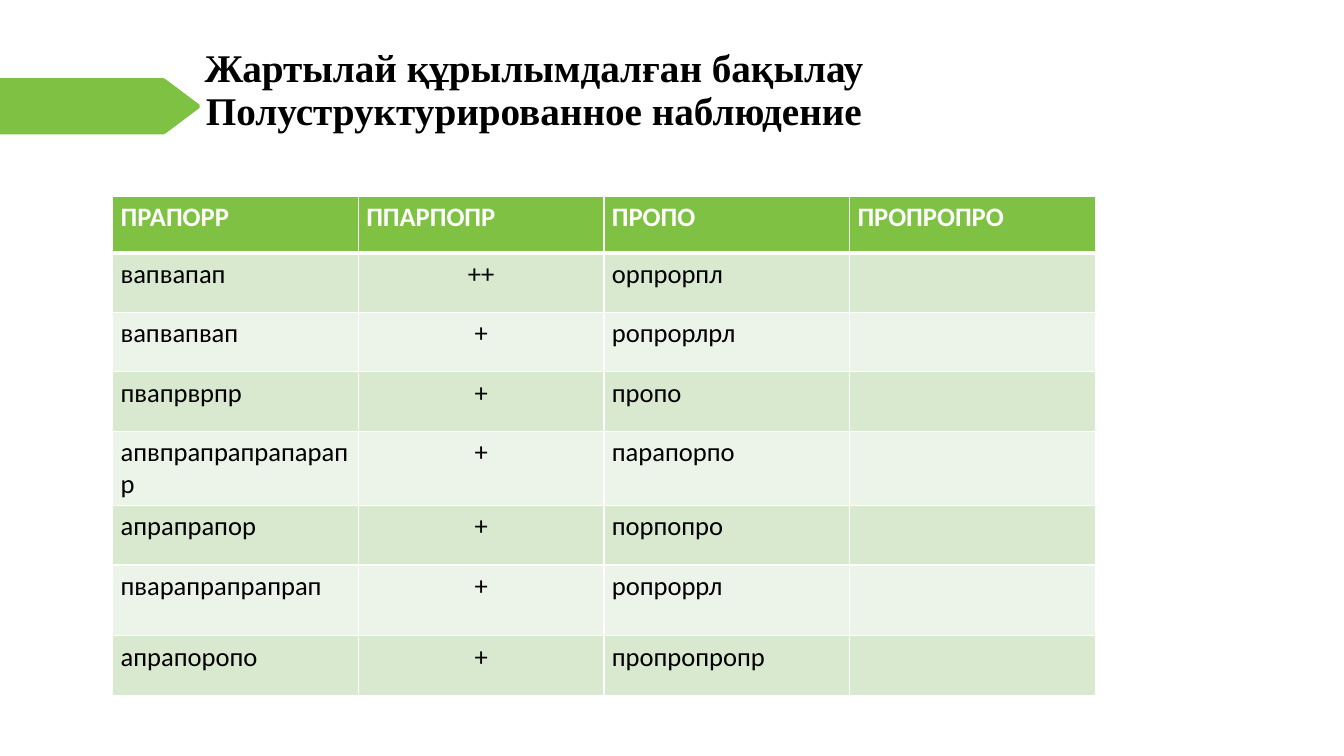
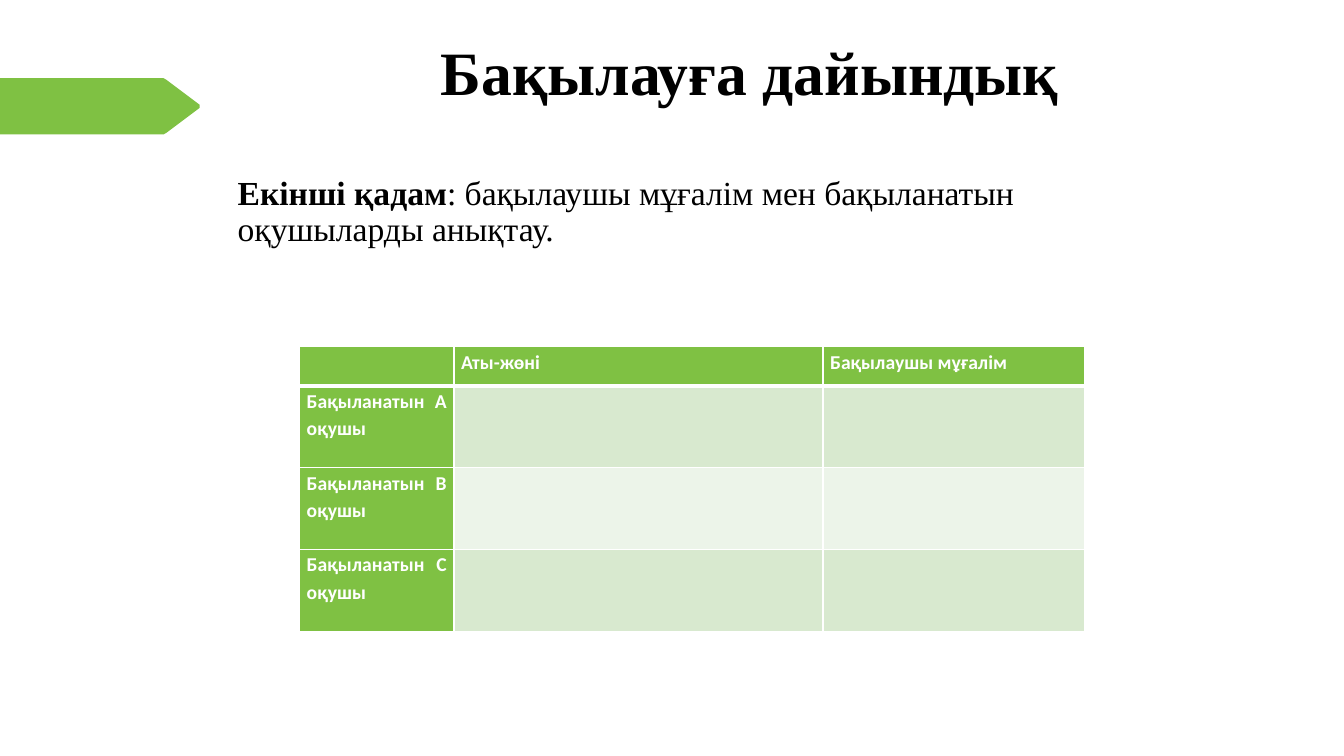
from dataclasses import dataclass

from lxml.etree import SubElement
from pptx import Presentation
from pptx.dml.color import RGBColor as RGB
from pptx.enum.text import MSO_ANCHOR as ANCHOR, PP_ALIGN as ALIGN
from pptx.oxml.ns import qn
from pptx.util import Cm, Pt


@dataclass(frozen=True)
class Theme:
    green: str = "7FC143"
    stripe_dark: str = "D8E9CF"
    stripe_light: str = "ECF4E9"
    white: str = "FFFFFF"
    black: str = "000000"
    serif: str = "Times New Roman"
    sans: str = "Calibri"
    title: int = 28
    title_large: int = 44
    body: int = 24
    cell: int = 19
    cell_small: int = 14
    rule: int = 1
    header_rule: int = 3
    tight: float = 0.9


T = Theme()


def write(p, text, font=T.serif, size=T.body, color=T.black, bold=False,
          align=ALIGN.LEFT, spacing=1.0):
    """Append text to a paragraph; a newline becomes a line break."""
    p.alignment = align
    p.line_spacing = spacing
    for i, line in enumerate(text.split("\n")):
        if i:
            p.add_line_break()
        r = p.add_run()
        r.text = line
        r.font.name = font
        r.font.size = Pt(size)
        r.font.bold = bold
        r.font.color.rgb = RGB.from_string(color)


def add_text_box(s, left, top, width, height, anchor=ANCHOR.TOP):
    """Add a wrapping text box and return its first paragraph."""
    tf = s.shapes.add_textbox(Cm(left), Cm(top), Cm(width), Cm(height)).text_frame
    tf.word_wrap = True
    tf.vertical_anchor = anchor
    return tf.paragraphs[0]


def add_title(s, text, box, size):
    p = add_text_box(s, *box, anchor=ANCHOR.MIDDLE)
    write(p, text, size=size, bold=True, align=ALIGN.CENTER, spacing=T.tight)


def add_arrow_band(s):
    """Draw the left arrow band, mirrored about its horizontal axis."""
    axis = 2.68
    upper = [(0, 0.71), (4.12, 0.71), (4.19, 0.67), (5.03, 0.04)]
    points = [(x, axis - dy) for x, dy in upper]
    points += [(x, axis + dy) for x, dy in reversed(upper)]
    points = [(Cm(x), Cm(y)) for x, y in points]
    builder = s.shapes.build_freeform(*points[0])
    builder.add_line_segments(points[1:], close=True)
    sp = builder.convert_to_shape()
    sp.shadow.inherit = False
    sp.fill.solid()
    sp.fill.fore_color.rgb = RGB.from_string(T.green)
    sp.line.fill.background()


def set_borders(cell, **widths):
    """Give the sides L, R, T and B of a cell white rules, widths in points."""
    tc_pr = cell._tc.get_or_add_tcPr()
    for side in "LRTB":
        width = Pt(widths.get(side, T.rule))
        ln = SubElement(tc_pr, qn(f"a:ln{side}"), w=str(width))
        fill = SubElement(ln, qn("a:solidFill"))
        SubElement(fill, qn("a:srgbClr"), val=T.white)


def add_table(s, left, top, widths, heights, rows, margins, size,
              aligns, spacing=1.0, header_column=False):
    """Add a striped table; aligns holds one alignment per column."""
    frame = s.shapes.add_table(len(heights), len(widths), Cm(left), Cm(top),
                               Cm(sum(widths)), Cm(sum(heights)))
    table = frame.table
    for column, width in zip(table.columns, widths):
        column.width = Cm(width)
    for row, height in zip(table.rows, heights):
        row.height = Cm(height)
    for i, texts in enumerate(rows):
        stripe = T.stripe_dark if i % 2 else T.stripe_light
        rules = {0: {"B": T.header_rule}, 1: {"T": T.header_rule}}.get(i, {})
        for j, text in enumerate(texts):
            cell = table.cell(i, j)
            header = i == 0 or (header_column and j == 0)
            cell.margin_left = cell.margin_right = Cm(margins[0])
            cell.margin_top = cell.margin_bottom = Cm(margins[1])
            set_borders(cell, **rules)
            cell.fill.solid()
            cell.fill.fore_color.rgb = RGB.from_string(T.green if header else stripe)
            if text:
                write(cell.text_frame.paragraphs[0], text, font=T.sans, size=size,
                      color=T.white if header else T.black, bold=header,
                      align=aligns[j] if i else aligns[0], spacing=spacing)


def add_slide(prs):
    s = prs.slides.add_slide(prs.slide_layouts[6])
    add_arrow_band(s)
    return s


def build_observation(prs):
    s = add_slide(prs)
    add_title(s, "Жартылай құрылымдалған бақылау\nПолуструктурированное наблюдение",
              (1.07, 0.51, 24.77, 3.58), T.title)
    rows = [
        ("ПРАПОРР", "ППАРПОПР", "ПРОПО", "ПРОПРОПРО"),
        ("вапвапап", "++", "орпрорпл", ""),
        ("вапвапвап", "+", "ропрорлрл", ""),
        ("пвапрврпр", "+", "пропо", ""),
        ("апвпрапрапрапарапр", "+", "парапорпо", ""),
        ("апрапрапор", "+", "порпопро", ""),
        ("пварапрапрапрап", "+", "ропроррл", ""),
        ("апрапоропо", "+", "пропропропр", ""),
    ]
    add_table(s, 2.84, 4.95, [6.19] * 4,
              [1.42, 1.5, 1.5, 1.5, 1.83, 1.5, 1.78, 1.5], rows,
              margins=(0.2, 0.13), size=T.cell,
              aligns=[ALIGN.LEFT, ALIGN.CENTER, ALIGN.LEFT, ALIGN.LEFT])


def build_preparation(prs):
    s = add_slide(prs)
    add_title(s, "Бақылауға дайындық", (8.74, 0.91, 20.32, 1.98), T.title_large)
    p = add_text_box(s, 5.74, 4.32, 22.6, 13)
    write(p, "Екінші қадам", bold=True, spacing=T.tight)
    write(p, ": бақылаушы мұғалім мен бақыланатын оқушыларды анықтау.",
          spacing=T.tight)
    rows = [("", "Аты-жөні", "Бақылаушы мұғалім")]
    rows += [(f"Бақыланатын {pupil} оқушы", "", "") for pupil in "АВС"]
    add_table(s, 7.55, 8.74, [3.89, 9.3, 6.6], [0.99] + [2.06] * 3, rows,
              margins=(0.18, 0), size=T.cell_small,
              aligns=[ALIGN.JUSTIFY] * 3, spacing=1.15, header_column=True)


def main():
    prs = Presentation()
    prs.slide_width, prs.slide_height = Cm(33.87), Cm(19.05)
    build_observation(prs)
    build_preparation(prs)
    prs.save("out.pptx")


if __name__ == "__main__":
    main()
